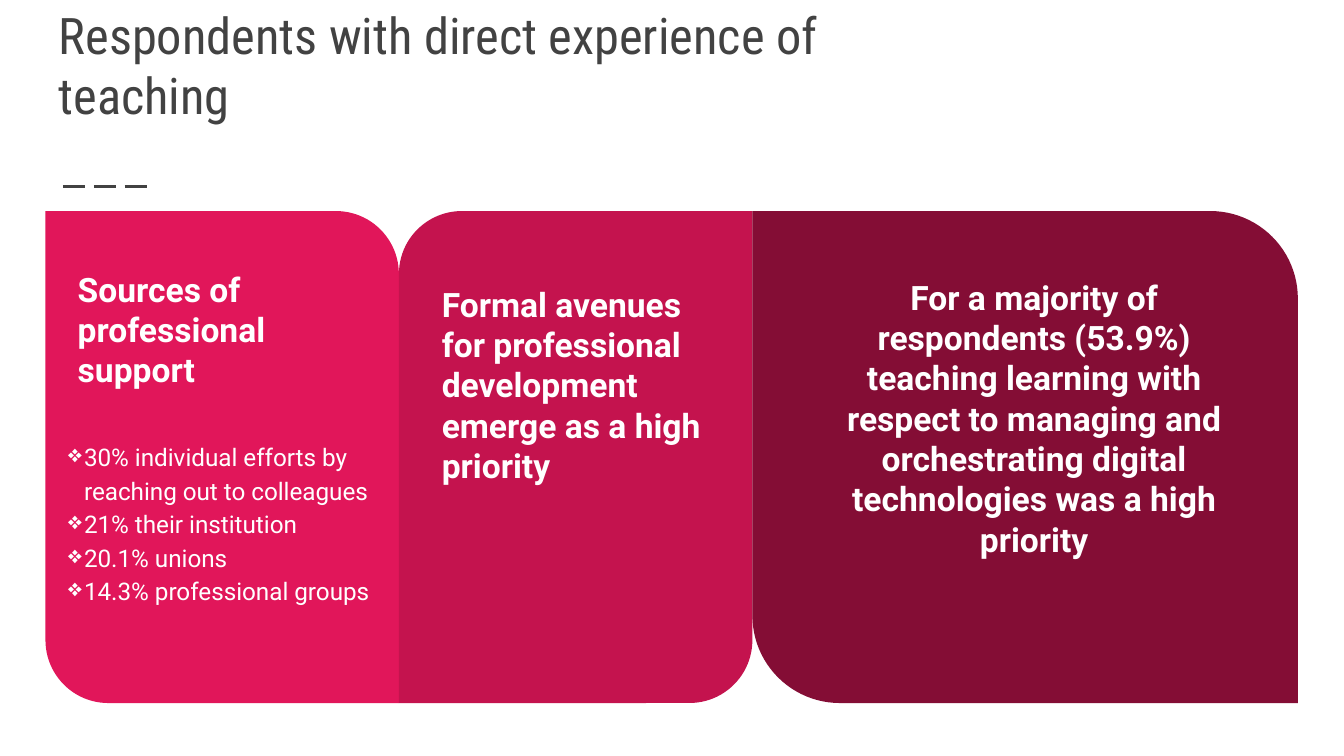
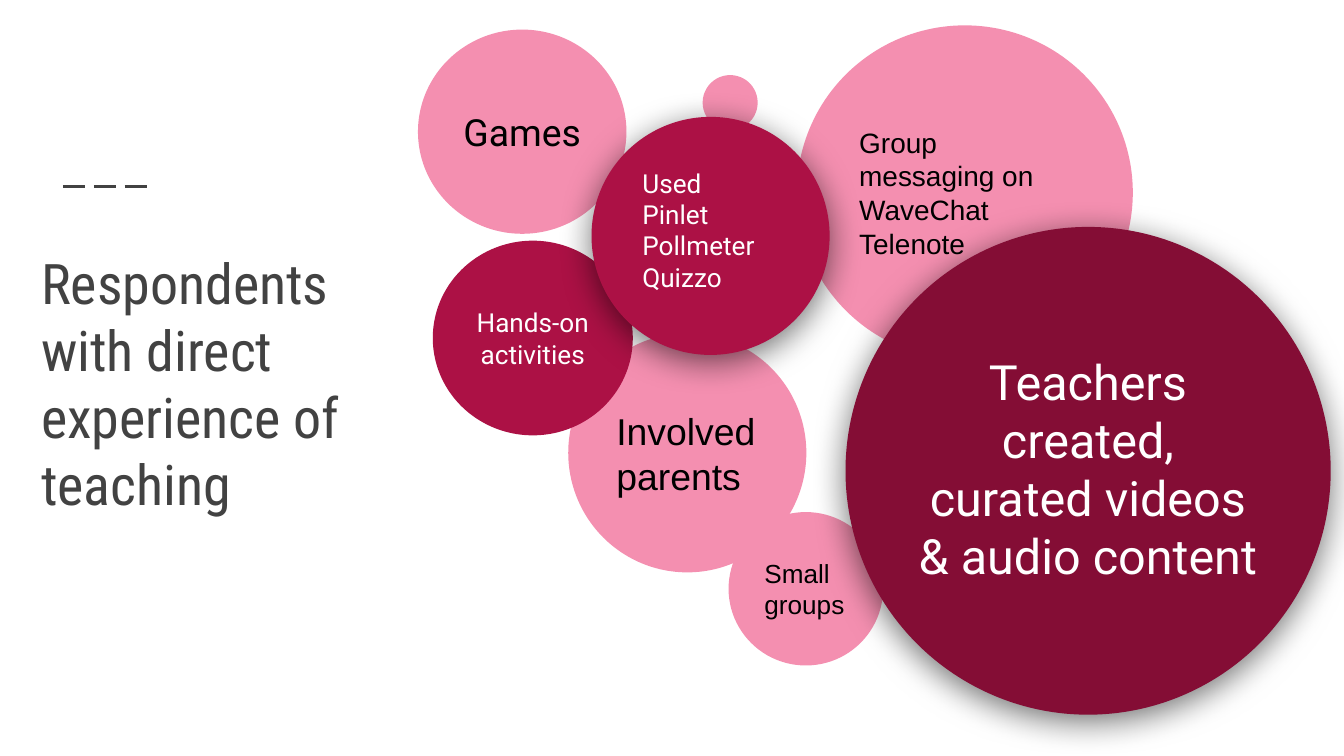
"""Build two slides on what respondents with direct teaching experience reported."""
import pptx
import pptx.util
import pptx.dml.color
import pptx.enum.dml
import pptx.enum.shapes
import pptx.enum.text
import pptx.oxml
import pptx.oxml.ns

Cm = pptx.util.Cm
Pt = pptx.util.Pt
SHAPE = pptx.enum.shapes.MSO_SHAPE
ALIGN = pptx.enum.text.PP_ALIGN
ANCHOR = pptx.enum.text.MSO_ANCHOR

COLORS = {
    "ink": "424242",
    "white": "FFFFFF",
    "black": "000000",
    "bright": "E1165A",
    "medium": "C4134E",
    "deep": "840D35",
    "berry": "AC1145",
    "pink": "F48FB0",
}
FRAME = {
    "word_wrap": True,
    "auto_size": pptx.enum.text.MSO_AUTO_SIZE.NONE,
    "margin_left": Cm(0.25),
    "margin_right": Cm(0.25),
    "margin_top": Cm(0.25),
    "margin_bottom": Cm(0.25),
}
HEADING = {"name": "Roboto", "size": Pt(18), "bold": True}
TITLE = "Respondents with direct experience of teaching"
CORNER = 0.178


def rgb(name):
    return pptx.dml.color.RGBColor.from_string(COLORS[name])


def apply(target, values):
    for key, value in values.items():
        setattr(target, key, value)


def write(sp, lines, font, color, align=ALIGN.LEFT, anchor=ANCHOR.TOP):
    tf = sp.text_frame
    apply(tf, {**FRAME, "vertical_anchor": anchor})
    for i, line in enumerate(lines):
        p = tf.add_paragraph() if i else tf.paragraphs[0]
        p.text = line
        p.alignment = align
        for r in p.runs:
            apply(r.font, font)
            r.font.color.rgb = rgb(color)
    return tf


def add_text(s, box, lines, font, color="white", **layout):
    sp = s.shapes.add_textbox(*map(Cm, box))
    return write(sp, lines, font, color, **layout)


def add_shape(s, kind, box, fill):
    sp = s.shapes.add_shape(kind, *map(Cm, box))
    sp.shadow.inherit = False
    sp.fill.solid()
    sp.fill.fore_color.rgb = rgb(fill)
    sp.line.fill.background()
    return sp


def add_panel(s, box, fill, corners):
    sp = add_shape(s, SHAPE.ROUND_2_DIAG_RECTANGLE, box, fill)
    for i, corner in enumerate(corners):
        sp.adjustments[i] = corner


def add_bubble(s, box, fill, text="", size=14, font="Roboto",
               color="black", align=ALIGN.LEFT):
    sp = add_shape(s, SHAPE.OVAL, box, fill)
    if text:
        write(sp, [text], {"name": font, "size": Pt(size)}, color,
              align, ANCHOR.MIDDLE)
    return sp


def add_soft_shadow(sp):
    effects = sp._element.spPr.find(pptx.oxml.ns.qn("a:effectLst"))
    effects.append(pptx.oxml.parse_xml(
        f'<a:outerShdw {pptx.oxml.ns.nsdecls("a")} blurRad="{Pt(18)}" '
        f'dist="{Pt(4)}" dir="5400000" algn="bl" rotWithShape="0">'
        f'<a:srgbClr val="{COLORS["black"]}"><a:alpha val="55000"/>'
        '</a:srgbClr></a:outerShdw>'))


def add_bullets(tf, mark):
    for p in tf.paragraphs:
        p.line_spacing = 1.15
        pPr = p._p.get_or_add_pPr()
        pPr.set("marL", str(Cm(0.3)))
        pPr.set("indent", str(Cm(-0.38)))
        ns = pptx.oxml.ns.nsdecls("a")
        for xml in (f'<a:buClr {ns}><a:srgbClr val="{COLORS["white"]}"/></a:buClr>',
                    f'<a:buChar {ns} char="{mark}"/>'):
            pPr.append(pptx.oxml.parse_xml(xml))


def add_dashes(s):
    line = s.shapes.add_connector(pptx.enum.shapes.MSO_CONNECTOR.STRAIGHT,
                                  Cm(1.19), Cm(3.53), Cm(2.9), Cm(3.53))
    line.line.color.rgb = rgb("ink")
    apply(line.line, {"width": Pt(1.5),
                      "dash_style": pptx.enum.dml.MSO_LINE.LONG_DASH})
    line._element.spPr.append(pptx.oxml.parse_xml(
        f'<a:effectLst {pptx.oxml.ns.nsdecls("a")}/>'))


def add_slide(prs, box, size, anchor):
    s = prs.slides.add_slide(prs.slide_layouts[5])
    add_dashes(s)
    title = s.shapes.title
    apply(title, dict(zip(("left", "top", "width", "height"), map(Cm, box))))
    write(title, [TITLE], {"name": "Roboto Condensed", "size": Pt(size)},
          "ink", anchor=anchor)
    return s


def build_support(prs):
    s = add_slide(prs, (0.86, 1.04, 16.99, 1.57), 27, ANCHOR.BOTTOM)
    x = 0.86
    for width, fill, corners in ((6.68, "bright", (0, CORNER)),
                                 (6.68, "medium", (CORNER, 0)),
                                 (10.31, "deep", (0, CORNER))):
        add_panel(s, (x, 3.99, width, 9.3), fill, corners)
        x += width
    add_text(s, (1.22, 4.83, 5.99, 3.02), ["Sources of professional support"],
             HEADING)
    tf = add_text(s, (1.04, 8.03, 6.5, 4.52), [
        "30% individual efforts by reaching out to colleagues",
        "21% their institution",
        "20.1% unions",
        "14.3% professional groups",
    ], {"name": "Roboto", "size": Pt(13)})
    add_bullets(tf, "❖")
    add_text(s, (8.1, 5.11, 5.84, 7.37),
             ["Formal avenues for professional development emerge as a high "
              "priority"], HEADING)
    add_text(s, (15.39, 4.98, 8.31, 7.49),
             ["For a majority of respondents (53.9%) teaching learning with "
              "respect to managing and orchestrating digital technologies was "
              "a high priority"], HEADING, align=ALIGN.CENTER)


def build_practices(prs):
    s = add_slide(prs, (0.53, 0.18, 6.91, 14.1), 30, ANCHOR.MIDDLE)
    add_bubble(s, (13.77, 9.68, 2.92, 2.9), "pink", "Small groups", font="Arial")
    add_bubble(s, (7.9, 0.56, 3.94, 3.86), "pink", "Games", 20,
               align=ALIGN.CENTER)
    add_bubble(s, (10.74, 6.3, 4.5, 4.52), "pink", "Involved parents", 20,
               "Arial")
    add_bubble(s, (15.06, 0.48, 6.35, 6.32), "pink",
               "Group messaging on WaveChat Telenote", 15, "Arial")
    add_bubble(s, (8.18, 4.55, 3.78, 3.68), "berry", "Hands-on activities",
               color="white", align=ALIGN.CENTER)
    add_bubble(s, (13.28, 1.42, 1.04, 1.04), "pink")
    add_soft_shadow(add_bubble(s, (15.98, 4.29, 9.17, 9.22), "deep"))
    add_text(s, (17.07, 5.99, 6.99, 5.72),
             ["Teachers created, curated videos & audio content"],
             {"name": "Roboto", "size": Pt(26)},
             align=ALIGN.CENTER, anchor=ANCHOR.MIDDLE)
    add_soft_shadow(add_bubble(s, (11.18, 2.21, 4.5, 4.5), "berry"))
    add_text(s, (11.89, 2.77, 3.05, 3.15),
             ["Used\vPinlet\vPollmeter\vQuizzo"],
             {"name": "Roboto", "size": Pt(14)}, anchor=ANCHOR.MIDDLE)


def main():
    prs = pptx.Presentation()
    apply(prs, {"slide_width": Cm(25.4), "slide_height": Cm(14.29)})
    build_support(prs)
    build_practices(prs)
    prs.save("out.pptx")


if __name__ == "__main__":
    main()
